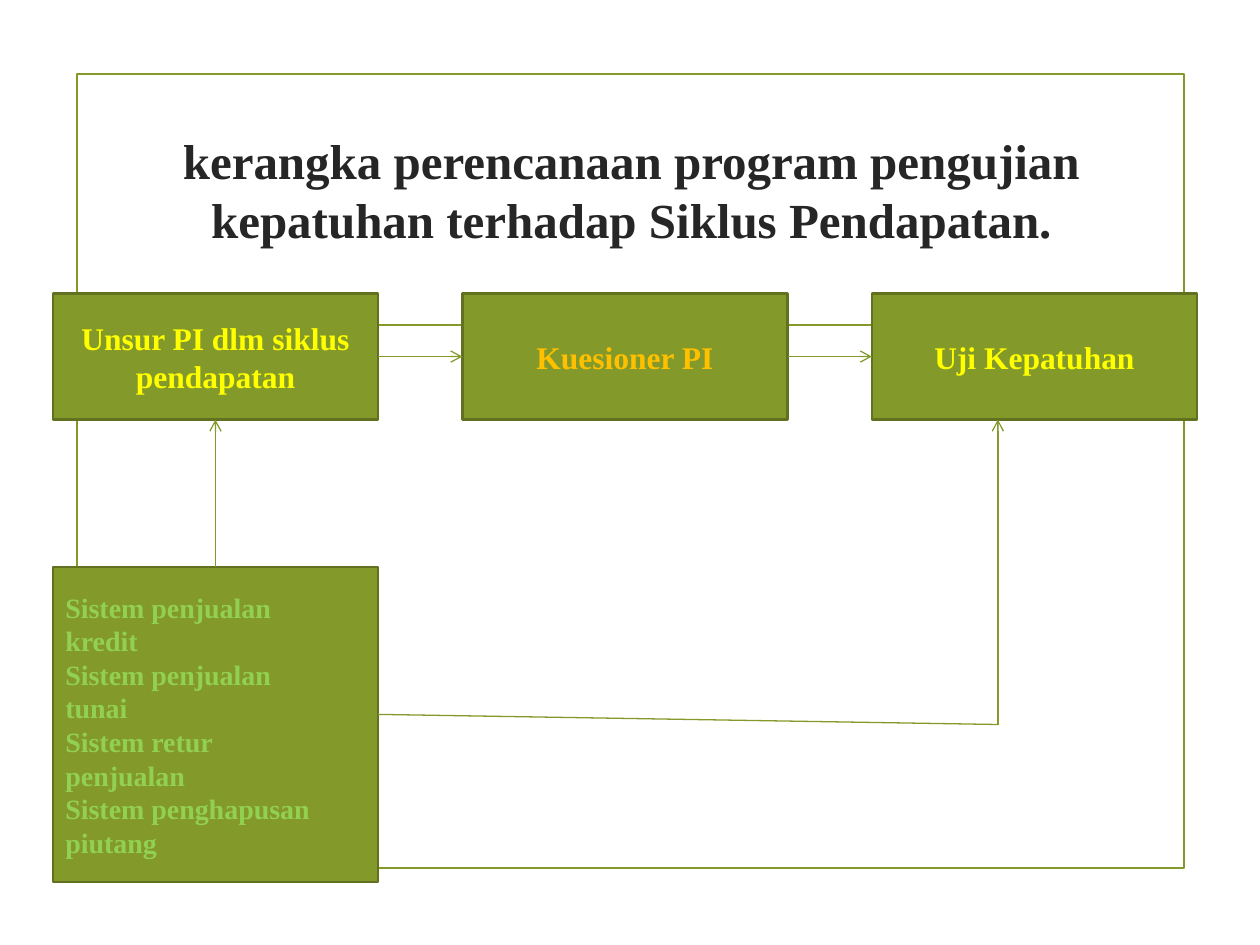
from dataclasses import dataclass

import pptx
import pptx.dml.color
import pptx.enum.shapes
import pptx.enum.text
import pptx.oxml
import pptx.oxml.ns
import pptx.util
from pptx.util import Inches

ALIGN = pptx.enum.text.PP_ALIGN


@dataclass(frozen=True)
class Theme:
    font: str = "Times New Roman"
    green: str = "83992A"
    dark_green: str = "61711F"
    light_green: str = "92D050"
    yellow: str = "FFFF00"
    amber: str = "FFC000"
    ink: str = "262626"
    title_size: int = 28
    box_size: int = 18
    list_size: int = 16
    border: float = 1.25
    arrow: float = 0.75


def rgb(value):
    return pptx.dml.color.RGBColor.from_string(value)


class SlideBuilder:
    def __init__(self, slide, theme):
        self.slide = slide
        self.theme = theme

    def fill_text(self, shape, lines, size, color, align):
        frame = shape.text_frame
        frame.word_wrap = True
        frame.vertical_anchor = pptx.enum.text.MSO_ANCHOR.MIDDLE
        font_format = {"name": self.theme.font, "size": pptx.util.Pt(size), "bold": True}
        for index, line in enumerate(lines):
            paragraph = frame.paragraphs[0] if index == 0 else frame.add_paragraph()
            paragraph.text = line
            paragraph.alignment = align
            for run in paragraph.runs:
                for name, value in font_format.items():
                    setattr(run.font, name, value)
                run.font.color.rgb = rgb(color)

    def title(self, left, top, width, height, text):
        box = self.slide.shapes.add_textbox(
            Inches(left), Inches(top), Inches(width), Inches(height))
        self.fill_text(box, [text], self.theme.title_size, self.theme.ink, ALIGN.CENTER)
        # Deeper bottom margin lifts the title above the rule
        box.text_frame.margin_bottom = Inches(0.47)

    def rectangle(self, left, top, width, height, line, fill=None):
        shape = self.slide.shapes.add_shape(
            pptx.enum.shapes.MSO_SHAPE.RECTANGLE,
            Inches(left), Inches(top), Inches(width), Inches(height))
        shape.shadow.inherit = False
        if fill:
            shape.fill.solid()
            shape.fill.fore_color.rgb = rgb(fill)
        else:
            shape.fill.background()
        shape.line.color.rgb = rgb(line)
        shape.line.width = pptx.util.Pt(self.theme.border)
        return shape

    def box(self, left, top, width, height, lines, size, color, align=ALIGN.CENTER):
        shape = self.rectangle(left, top, width, height,
                               self.theme.dark_green, self.theme.green)
        self.fill_text(shape, lines, size, color, align)

    def line(self, start, end, width, arrow=False):
        connector = self.slide.shapes.add_connector(
            pptx.enum.shapes.MSO_CONNECTOR.STRAIGHT,
            *(Inches(value) for value in (*start, *end)))
        connector.line.color.rgb = rgb(self.theme.green)
        connector.line.width = pptx.util.Pt(width)
        if arrow:
            connector.line._get_or_add_ln().append(pptx.oxml.parse_xml(
                f'<a:tailEnd {pptx.oxml.ns.nsdecls("a")} type="arrow"/>'))
        connector._element.spPr.append(pptx.oxml.parse_xml(
            f'<a:effectLst {pptx.oxml.ns.nsdecls("a")}/>'))


def main():
    presentation = pptx.Presentation()
    presentation.slide_width = Inches(10)
    presentation.slide_height = Inches(7.5)
    theme = Theme()
    builder = SlideBuilder(
        presentation.slides.add_slide(presentation.slide_layouts[6]), theme)

    # Frame, rule and title
    builder.rectangle(0.61, 0.59, 8.79, 6.3, theme.green)
    builder.line((1.4, 2.58), (8.61, 2.58), theme.border)
    builder.title(1.29, 1, 7.44, 1.43,
                  "kerangka perencanaan program pengujian "
                  "kepatuhan terhadap Siklus Pendapatan.")

    # Row of three steps
    left, top, width, height, pitch = 0.42, 2.33, 2.58, 1, 3.25
    steps = [("Unsur PI dlm siklus pendapatan", theme.yellow),
             ("Kuesioner PI", theme.amber),
             ("Uji Kepatuhan", theme.yellow)]
    for index, (text, color) in enumerate(steps):
        builder.box(left + index * pitch, top, width, height,
                    [text], theme.box_size, color)

    # List of systems
    list_top, list_height = 4.5, 2.5
    systems = ["Sistem penjualan\vkredit", "Sistem penjualan\vtunai",
               "Sistem retur\vpenjualan", "Sistem penghapusan\vpiutang"]
    builder.box(left, list_top, width, list_height, systems,
                theme.list_size, theme.light_green, ALIGN.LEFT)

    # Arrows between the steps
    right, bottom = left + width, top + height
    for index in range(len(steps) - 1):
        builder.line((right + index * pitch, 2.83),
                     (left + (index + 1) * pitch, 2.83), theme.arrow, arrow=True)

    # Arrows from the list up to the first and last step
    center, corner = left + width / 2, (7.92, 5.75)
    builder.line((center, list_top), (center, bottom), theme.arrow, arrow=True)
    builder.line((right, 5.67), corner, theme.arrow)
    builder.line(corner, (corner[0], bottom), theme.arrow, arrow=True)

    presentation.save("out.pptx")


if __name__ == "__main__":
    main()
